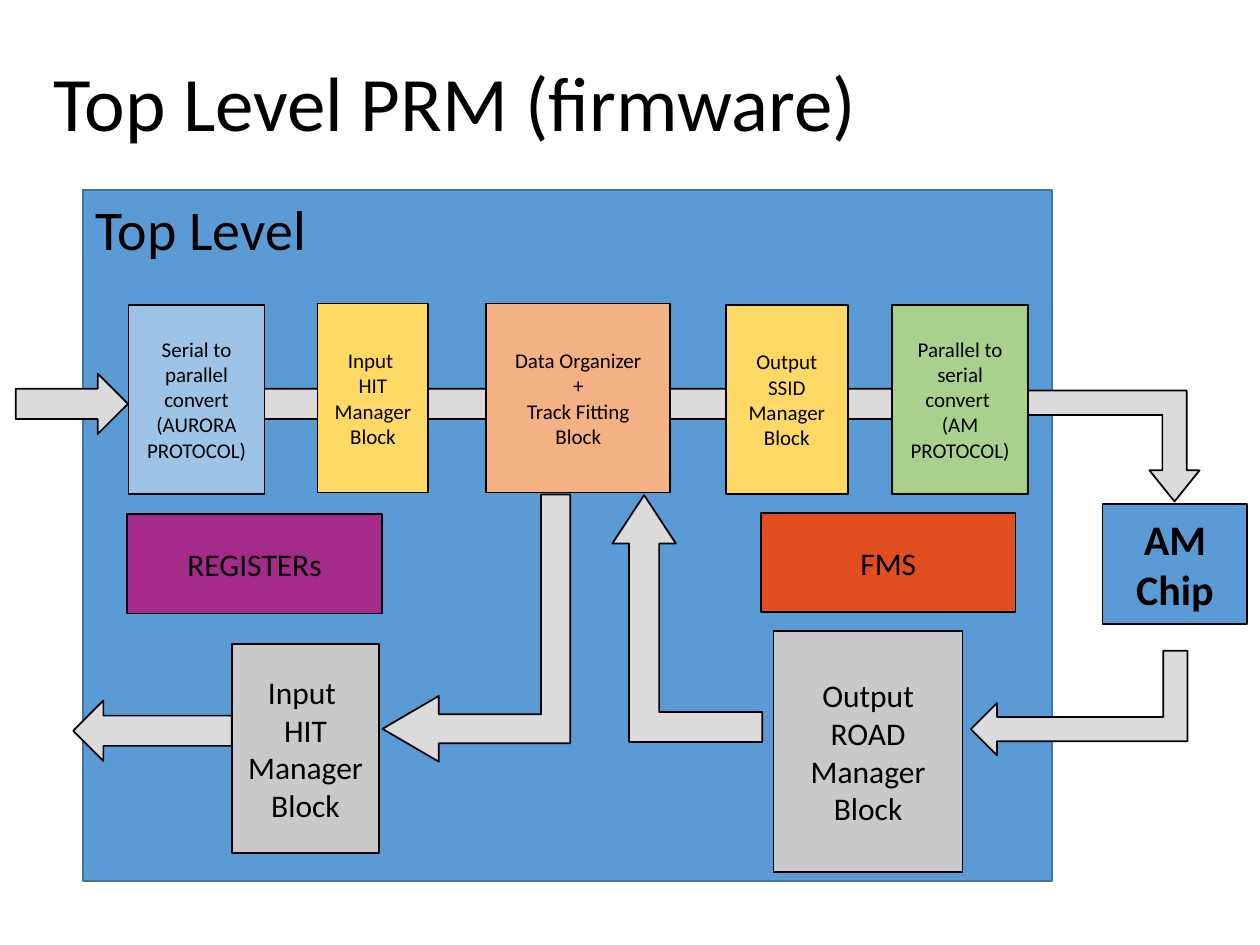
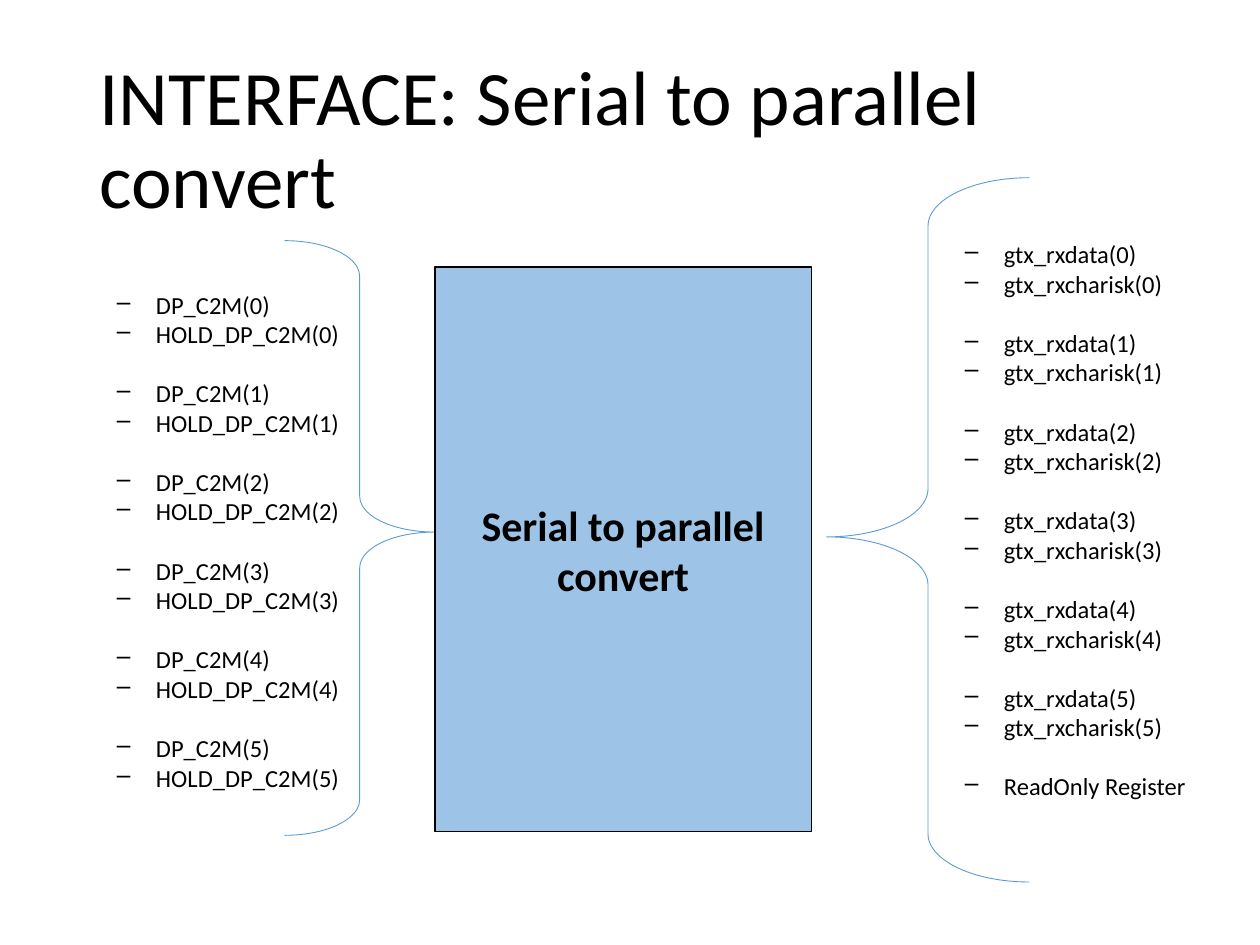
from dataclasses import dataclass

from lxml.etree import SubElement
from pptx import Presentation
from pptx.dml.color import RGBColor
from pptx.enum.shapes import MSO_SHAPE as Preset
from pptx.enum.text import MSO_ANCHOR as Anchor, PP_ALIGN as Align
from pptx.oxml.ns import qn
from pptx.util import Inches, Pt

BLACK = RGBColor(0x00, 0x00, 0x00)
BLUE = RGBColor(0x5B, 0x9B, 0xD5)
DARK_BLUE = RGBColor(0x43, 0x73, 0x9E)
PALE_BLUE = RGBColor(0x9D, 0xC3, 0xE6)
YELLOW = RGBColor(0xFF, 0xD9, 0x66)
ORANGE = RGBColor(0xF4, 0xB1, 0x83)
GREEN = RGBColor(0xA9, 0xD1, 0x8E)
PURPLE = RGBColor(0xA5, 0x2B, 0x8B)
RED = RGBColor(0xE0, 0x4E, 0x20)
GREY = RGBColor(0xC9, 0xC9, 0xC9)
ARROW_GREY = RGBColor(0xDB, 0xDB, 0xDB)

FONT = "Calibri"
COLUMNS, ROWS = 100, 75
SLIDE_WIDTH, SLIDE_HEIGHT = Inches(10), Inches(7.5)
DASH_INDENT = Inches(0.31)
LANES = 6


@dataclass
class Box:
    """A region measured in columns and rows of the slide grid."""

    left: float
    top: float
    width: float
    height: float

    def region(self, left, top, width, height):
        """Return a region placed from this box's top left corner."""
        return Box(self.left + left, self.top + top, width, height)

    def frame(self):
        """Return left, top, width and height as slide lengths."""
        column, row = SLIDE_WIDTH / COLUMNS, SLIDE_HEIGHT / ROWS
        return (round(self.left * column), round(self.top * row),
                round(self.width * column), round(self.height * row))


def write(holder, lines, size=18, bold=False, align=Align.CENTER,
          anchor=Anchor.MIDDLE, spacing=None, dashed=False, group=0):
    """Fill a shape with paragraphs, spacing out groups of lines if asked."""
    frame = holder.text_frame
    frame.word_wrap = True
    frame.vertical_anchor = anchor
    for index, line in enumerate(lines):
        para = frame.paragraphs[0] if index == 0 else frame.add_paragraph()
        para.alignment = align
        if dashed:
            properties = para._p.get_or_add_pPr()
            properties.set("marL", str(DASH_INDENT))
            properties.set("indent", str(-DASH_INDENT))
            SubElement(properties, qn("a:buChar")).set("char", "–")
        if spacing:
            para.line_spacing = spacing
        if group and index and index % group == 0:
            para.space_before = Pt(size * 1.22)
        span = para.add_run()
        span.text = line
        span.font.name = FONT
        span.font.size = Pt(size)
        span.font.bold = bold
        span.font.color.rgb = BLACK


def add_text(page, box, lines, **style):
    """Place a text box on the page."""
    write(page.shapes.add_textbox(*box.frame()), lines, **style)


def add_title(page, box, title):
    """Place a slide title."""
    add_text(page, box, [title], size=44, align=Align.LEFT, spacing=0.9)


def add_preset(page, box, preset, fill=None, line=BLACK, weight=1,
               turn=0, flip=None, adjust=()):
    """Place a preset shape, turned, flipped and adjusted as asked."""
    shape = page.shapes.add_shape(preset, *box.frame())
    shape.shadow.inherit = False
    if fill is None:
        shape.fill.background()
    else:
        shape.fill.solid()
        shape.fill.fore_color.rgb = fill
    shape.line.color.rgb = line
    shape.line.width = Pt(weight)
    shape.rotation = turn
    if flip:
        shape._element.spPr.find(qn("a:xfrm")).set(flip, "1")
    for index, value in enumerate(adjust):
        shape.adjustments[index] = value
    return shape


def add_block(page, box, fill, lines, **style):
    """Place an outlined block with centred text."""
    write(add_preset(page, box, Preset.RECTANGLE, fill), lines, **style)


def add_panel(page, box):
    """Draw the top level panel with its heading."""
    panel = add_preset(page, box, Preset.RECTANGLE, BLUE, line=DARK_BLUE)
    panel.text_frame.margin_top = Inches(0.03)
    write(panel, ["Top Level"], size=32, align=Align.LEFT, anchor=Anchor.TOP)


def add_data_flow(page, box):
    """Draw the straight and bent arrows of the data flow."""
    for place, turn in (
        ((-3.3, 12.5, 4.8, 8.9), 270),
        ((40.5, -13.1, 4.8, 60.1), 270),
        ((3.1, 36.6, 4.8, 12.6), 90),
    ):
        add_preset(page, box.region(*place), Preset.DOWN_ARROW, ARROW_GREY, turn=turn)
    for place, turn, flip, adjust in (
        ((70.4, 15.9, 18.2, 8.8), 180, "flipH", (0.219, 0.226, 0.281)),
        ((74.9, 32.1, 8.3, 17.2), 90, "flipV", (0.232, 0.25, 0.25)),
        ((42, 24.2, 11.9, 19.6), 0, "flipH", (0.2, 0.212, 0.323)),
        ((20.6, 27.3, 21.2, 14.9), 270, "flipH", (0.155, 0.175, 0.3)),
    ):
        add_preset(page, box.region(*place), Preset.BENT_UP_ARROW, ARROW_GREY,
                   turn=turn, flip=flip, adjust=adjust)


def add_pipeline(page, box):
    """Draw the row of processing blocks from input to output."""
    for left, top, width, fill, lines in (
        (3.6, 9.1, 10.8, PALE_BLUE, ["Serial to parallel convert (AURORA PROTOCOL)"]),
        (18.6, 9, 8.8, YELLOW, ["Input ", "HIT", "Manager Block"]),
        (32, 9, 14.6, ORANGE, ["Data Organizer", "+", "Track Fitting", "Block"]),
        (51, 9.1, 9.7, YELLOW, ["Output", "SSID", "Manager Block"]),
        (64.2, 9.1, 10.8, GREEN, ["Parallel to serial convert ", "(AM PROTOCOL)"]),
    ):
        add_block(page, box.region(left, top, width, 15), fill, lines, size=12)


def add_support_blocks(page, box):
    """Draw the control blocks, the return path managers and the chip."""
    for place, fill, lines in (
        ((3.5, 25.7, 20.2, 7.9), PURPLE, ["REGISTERs"]),
        ((53.8, 25.6, 20.2, 7.9), RED, ["FMS"]),
        ((11.8, 36, 11.7, 16.6), GREY, ["Input ", "HIT", "Manager Block"]),
        ((54.8, 35, 15, 19.1), GREY, ["Output", "ROAD", "Manager Block"]),
    ):
        add_block(page, box.region(*place), fill, lines)
    add_block(page, box.region(80.9, 24.9, 11.5, 9.5), BLUE, ["AM Chip"],
              size=24, bold=True)


def add_signals(page, box, lines):
    """List signals with dashes, two to a lane."""
    add_text(page, box, lines, size=14, align=Align.LEFT, anchor=Anchor.TOP,
             dashed=True, group=2)


def lane_signals(*names):
    """Return the named signals numbered for every lane."""
    return [f"{name}({lane})" for lane in range(LANES) for name in names]


def build_top_level(page, box):
    """Build the block diagram slide."""
    panel = box.region(6.6, 15.1, 76.9, 54.8)
    add_title(page, box.region(3.3, 1.2, 86.2, 14.5), "Top Level PRM (firmware)")
    add_panel(page, panel)
    add_data_flow(page, panel)
    add_pipeline(page, panel)
    add_support_blocks(page, panel)


def build_interface(page, box):
    """Build the converter interface slide."""
    add_title(page, box.region(6.9, 4, 91, 14.5), "INTERFACE: Serial to parallel convert")
    for place, turn in (((22.6, 19.1, 11.9, 47.2), 0), ((65.6, 14.1, 16.1, 55.9), 180)):
        add_preset(page, box.region(*place), Preset.RIGHT_BRACE, line=BLUE,
                   weight=0.5, turn=turn, adjust=(0.238, 0.49))
    add_signals(page, box.region(8.3, 22.5, 20.3, 43.4),
                lane_signals("DP_C2M", "HOLD_DP_C2M"))
    add_signals(page, box.region(75.6, 18.5, 22.9, 45.8),
                lane_signals("gtx_rxdata", "gtx_rxcharisk") + ["ReadOnly Register"])
    add_block(page, box.region(34.5, 21.2, 29.9, 44.8), PALE_BLUE,
              ["Serial to parallel convert"], size=24, bold=True)


def main():
    """Build and save the deck."""
    deck = Presentation()
    deck.slide_width, deck.slide_height = SLIDE_WIDTH, SLIDE_HEIGHT
    for build in (build_top_level, build_interface):
        build(deck.slides.add_slide(deck.slide_layouts[6]), Box(0, 0, COLUMNS, ROWS))
    deck.save("out.pptx")


if __name__ == "__main__":
    main()
